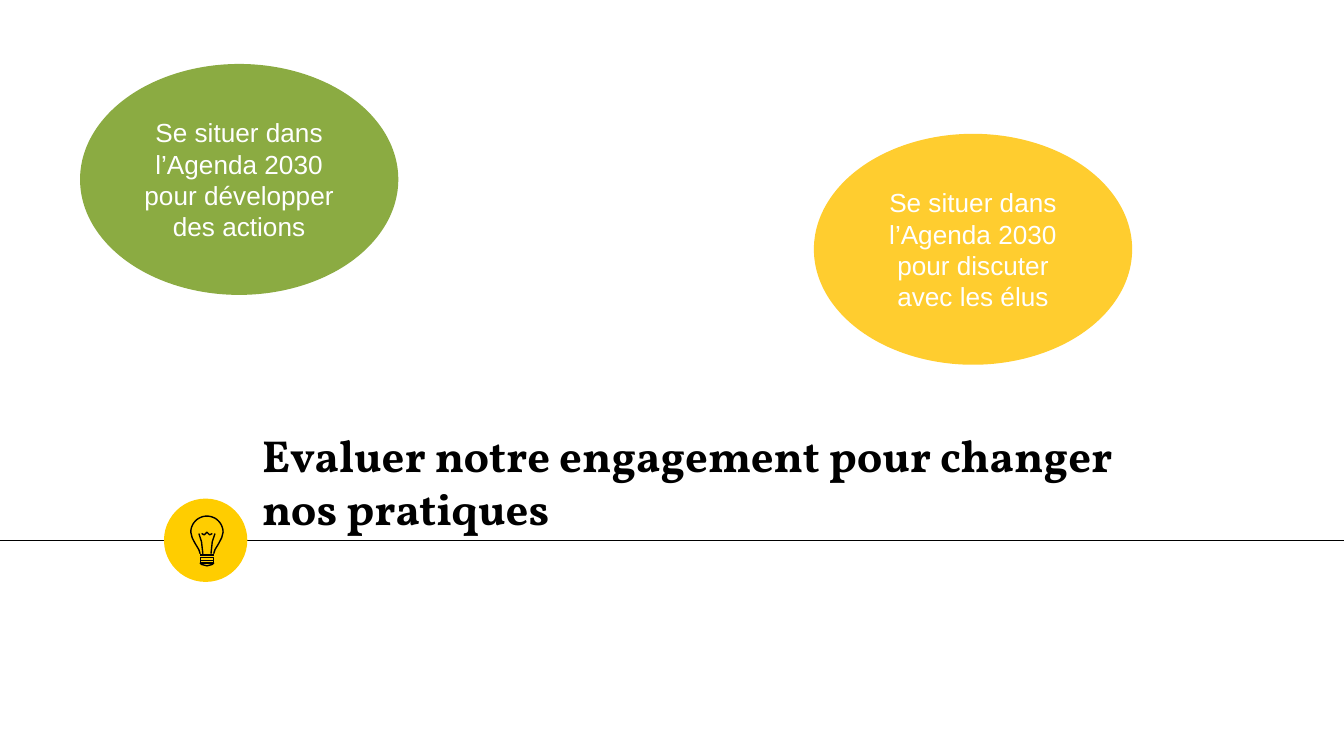
from math import cos, pi, sin

from pptx import Presentation
from pptx.dml.color import RGBColor
from pptx.enum.shapes import MSO_CONNECTOR, MSO_SHAPE
from pptx.enum.text import MSO_ANCHOR, MSO_AUTO_SIZE, PP_ALIGN
from pptx.oxml.ns import qn
from pptx.util import Inches, Pt

TITLE = "Evaluer notre engagement pour changer nos pratiques"
GOALS = [
    ("Se situer dans l’Agenda 2030 pour développer des actions", "green", 0.61, 0.49),
    ("Se situer dans l’Agenda 2030 pour discuter avec les élus", "yellow", 6.07, 1.01),
]
GOAL_SIZE = (2.34, 1.69)

THEME = {
    "black": RGBColor(0x00, 0x00, 0x00),
    "white": RGBColor(0xFF, 0xFF, 0xFF),
    "gold": RGBColor(0xFF, 0xCD, 0x00),
    "green": RGBColor(0x8B, 0xAB, 0x42),
    "yellow": RGBColor(0xFF, 0xCD, 0x2F),
    "title": {"name": "Vollkorn", "size": Pt(24), "bold": True},
    "goal": {"name": "Arial", "size": Pt(14), "bold": False},
    "thin": Pt(0.75),
    "border": Pt(2),
}

# Bulb parts: horizontal offsets from the bulb's axis, heights on the slide
BULB_AXIS = 1.54
GLASS_CENTER, GLASS_RADIUS = 3.96, 0.12
GLASS_NECK = [(0.11, 4.0), (0.09, 4.04), (0.06, 4.09), (0.05, 4.12)]
FILAMENT_LEG = [(0.06, 3.97), (0.04, 4.03), (0.03, 4.12)]
FILAMENT_WAVE = [(-0.04, 3.97), (-0.02, 3.98), (0, 3.96), (0.02, 3.98), (0.04, 3.97)]
CAP_LINE = [(-0.05, 4.13), (0.05, 4.13)]
CAP_TIP = [(-0.05, 4.19), (-0.04, 4.2), (0, 4.21), (0.04, 4.2), (0.05, 4.19)]
CAP_RING_TOPS = [4.15, 4.17]
CAP_RING = (0.05, 0.02)


def format_text(frame, text, font, color, align, anchor):
    settings = {"word_wrap": True, "auto_size": MSO_AUTO_SIZE.NONE, "vertical_anchor": anchor}
    settings.update({f"margin_{side}": Inches(0.1) for side in ("left", "top", "right", "bottom")})
    for name, value in settings.items():
        setattr(frame, name, value)
    paragraph = frame.paragraphs[0]
    paragraph.alignment = align
    run = paragraph.add_run()
    run.text = text
    for name, value in font.items():
        setattr(run.font, name, value)
    run.font.color.rgb = color


def add_ellipse(slide, box, color):
    shape = slide.shapes.add_shape(MSO_SHAPE.OVAL, *map(Inches, box))
    shape.shadow.inherit = False
    shape.fill.solid()
    shape.fill.fore_color.rgb = color
    return shape


def mirror(points):
    return [(-x, y) for x, y in points]


def add_stroke(group, points, closed=False):
    points = [(Inches(BULB_AXIS + x), Inches(y)) for x, y in points]
    builder = group.shapes.build_freeform(*points[0])
    builder.add_line_segments(points[1:], close=closed)
    shape = builder.convert_to_shape()
    shape.shadow.inherit = False
    shape.fill.background()
    shape.line.color.rgb = THEME["black"]
    shape.line.width = THEME["thin"]


def add_bulb(slide):
    group = slide.shapes.add_group_shape()
    half_width, height = CAP_RING
    for top in CAP_RING_TOPS:
        ring = [(-half_width, top), (half_width, top),
                (half_width, top + height), (-half_width, top + height)]
        add_stroke(group, ring, closed=True)
    add_stroke(group, CAP_TIP, closed=True)
    steps = 24
    dome = [(-GLASS_RADIUS * cos(pi * step / steps), GLASS_CENTER - GLASS_RADIUS * sin(pi * step / steps))
            for step in range(steps + 1)]
    add_stroke(group, mirror(GLASS_NECK)[::-1] + dome + GLASS_NECK)
    for points in (FILAMENT_LEG, mirror(FILAMENT_LEG), FILAMENT_WAVE, CAP_LINE):
        add_stroke(group, points)


def main():
    presentation = Presentation()
    presentation.slide_width = Inches(10)
    presentation.slide_height = Inches(10) * 9 // 16
    slide = presentation.slides.add_slide(presentation.slide_layouts[5])

    rule = slide.shapes.add_connector(
        MSO_CONNECTOR.STRAIGHT, Inches(-0.01), Inches(4.02), Inches(10.01), Inches(4.02))
    rule.line.color.rgb = THEME["black"]
    rule.line.width = THEME["thin"]
    properties = rule.element.spPr
    properties.append(properties.makeelement(qn("a:effectLst"), {}))

    badge = add_ellipse(slide, (1.22, 3.71, 0.62, 0.62), THEME["gold"])
    badge.line.fill.background()

    title = slide.shapes.title
    title.left, title.top, title.width, title.height = map(Inches, (1.85, 3.16, 6.61, 0.92))
    format_text(title.text_frame, TITLE, THEME["title"], THEME["black"],
                PP_ALIGN.LEFT, MSO_ANCHOR.BOTTOM)

    add_bulb(slide)

    for text, color, left, top in GOALS:
        goal = add_ellipse(slide, (left, top, *GOAL_SIZE), THEME[color])
        goal.line.color.rgb = THEME[color]
        goal.line.width = THEME["border"]
        format_text(goal.text_frame, text, THEME["goal"], THEME["white"],
                    PP_ALIGN.CENTER, MSO_ANCHOR.MIDDLE)

    presentation.save("out.pptx")


if __name__ == "__main__":
    main()
